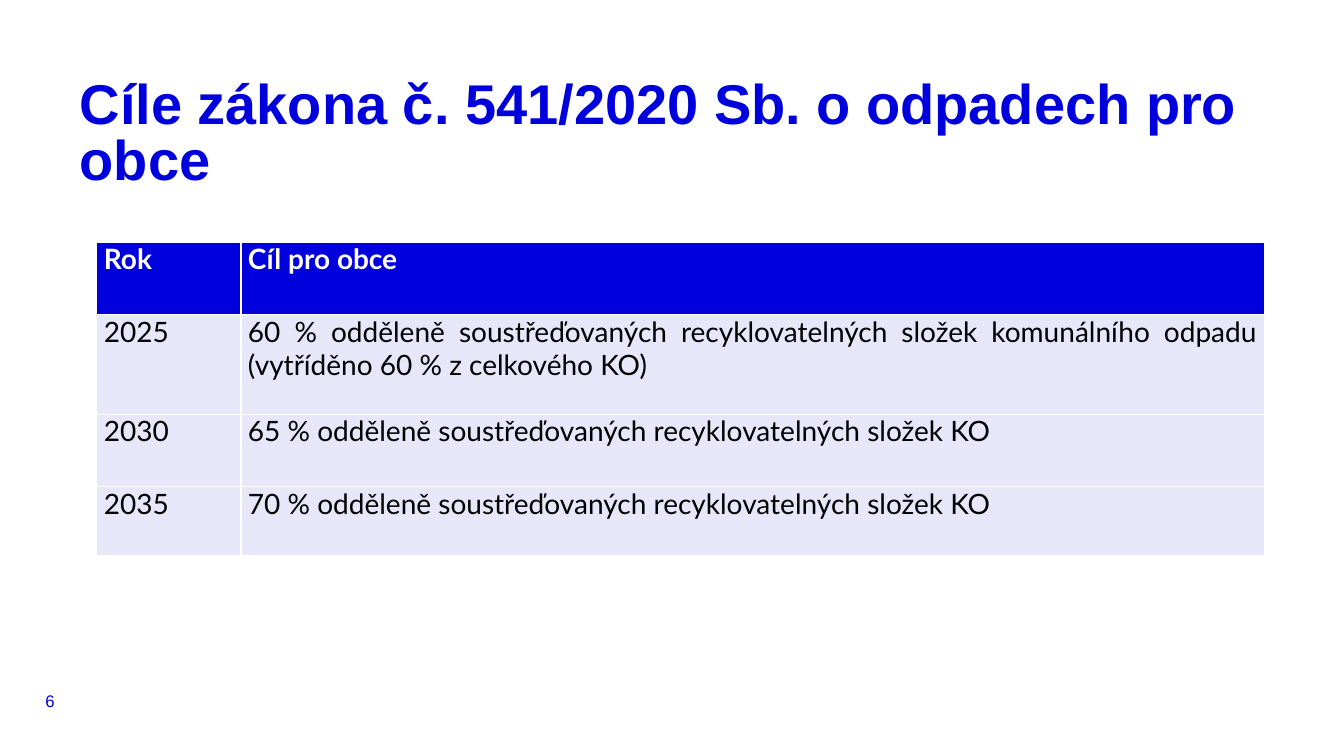
from pptx import Presentation
from pptx.dml.color import RGBColor
from pptx.enum.text import MSO_ANCHOR, MSO_AUTO_SIZE, PP_ALIGN
from pptx.util import Inches, Pt

LEFT, JUSTIFY = PP_ALIGN.LEFT, PP_ALIGN.JUSTIFY
TOP, MIDDLE = MSO_ANCHOR.TOP, MSO_ANCHOR.MIDDLE
NO_AUTOFIT = MSO_AUTO_SIZE.NONE

BLUE, PALE, WHITE, BLACK = "0000DC", "E7E7F9", "FFFFFF", "000000"


def color(hex_string):
    return RGBColor.from_string(hex_string)


def write(frame, text, font_name, size, hex_string, bold, align, anchor, side=0):
    """Fill a text frame or table cell with one formatted paragraph."""
    frame.margin_left = frame.margin_right = Inches(side)
    frame.margin_top = frame.margin_bottom = 0
    frame.vertical_anchor = anchor
    frame.text = text
    paragraph = getattr(frame, "text_frame", frame).paragraphs[0]
    paragraph.alignment = align
    font = paragraph.font
    font.name, font.size, font.bold = font_name, Pt(size), bold
    font.color.rgb = color(hex_string)
    return paragraph


presentation = Presentation()
presentation.slide_width = Inches(13.33)
presentation.slide_height = Inches(7.5)
slide = presentation.slides.add_slide(presentation.slide_layouts[5])

# Title
title = slide.shapes.title
title.left, title.top = Inches(0.79), Inches(0.79)
title.width, title.height = Inches(11.76), Inches(0.87)
title_frame = title.text_frame
title_frame.word_wrap = True
title_frame.auto_size = NO_AUTOFIT
heading = write(title_frame, "Cíle zákona č. 541/2020 Sb. o odpadech pro obce",
                "Arial", 40, BLUE, True, LEFT, TOP)
heading.line_spacing = Pt(40)

# Table of targets; the default table style draws the white rules
targets = [
    ("Rok", "Cíl pro obce"),
    ("2025", "60 % odděleně soustřeďovaných recyklovatelných složek "
             "komunálního odpadu (vytříděno 60 % z celkového KO)"),
    ("2030", "65 % odděleně soustřeďovaných recyklovatelných složek KO"),
    ("2035", "70 % odděleně soustřeďovaných recyklovatelných složek KO"),
]
column_widths = [1.43, 10.15]
row_heights = [0.72, 0.99, 0.72, 0.68]
table = slide.shapes.add_table(
    len(targets), len(column_widths), Inches(0.96), Inches(2.4),
    Inches(sum(column_widths)), Inches(sum(row_heights))).table
for column, width in zip(table.columns, column_widths):
    column.width = Inches(width)
for row_index, (row, height) in enumerate(zip(table.rows, row_heights)):
    row.height = Inches(height)
    is_header = row_index == 0
    for cell, text in zip(row.cells, targets[row_index]):
        cell.fill.solid()
        cell.fill.fore_color.rgb = color(BLUE if is_header else PALE)
        paragraph = write(cell, text, "Lato", 20, WHITE if is_header else BLACK,
                          is_header, JUSTIFY, TOP, side=0.07)
        paragraph.space_after = Pt(2)

# Slide number
number_box = slide.shapes.add_textbox(Inches(0.45), Inches(6.81), Inches(0.28), Inches(0.28))
number_box.text_frame.word_wrap = True
write(number_box.text_frame, "6", "Arial", 12, BLUE, False, LEFT, MIDDLE)

presentation.save("out.pptx")
